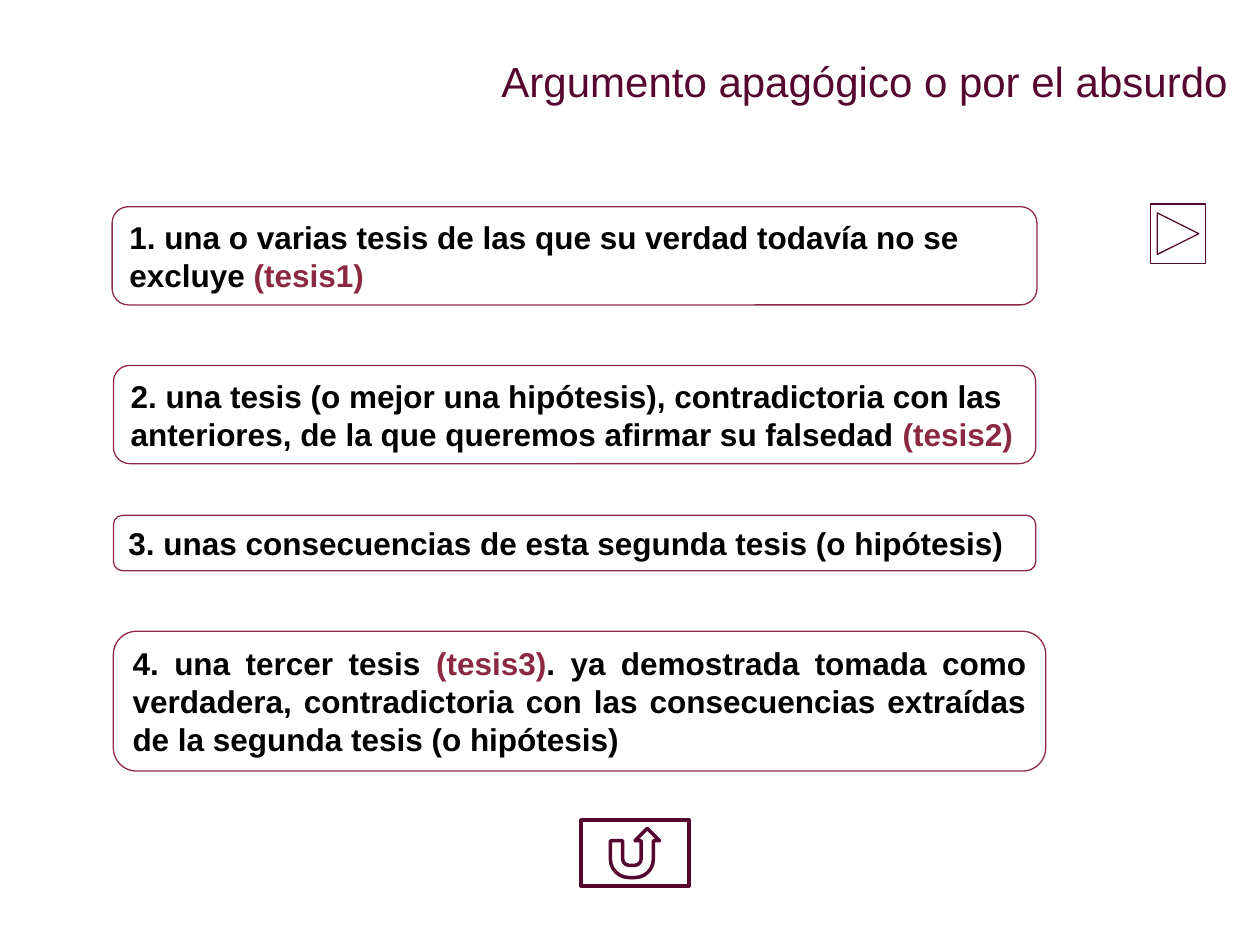
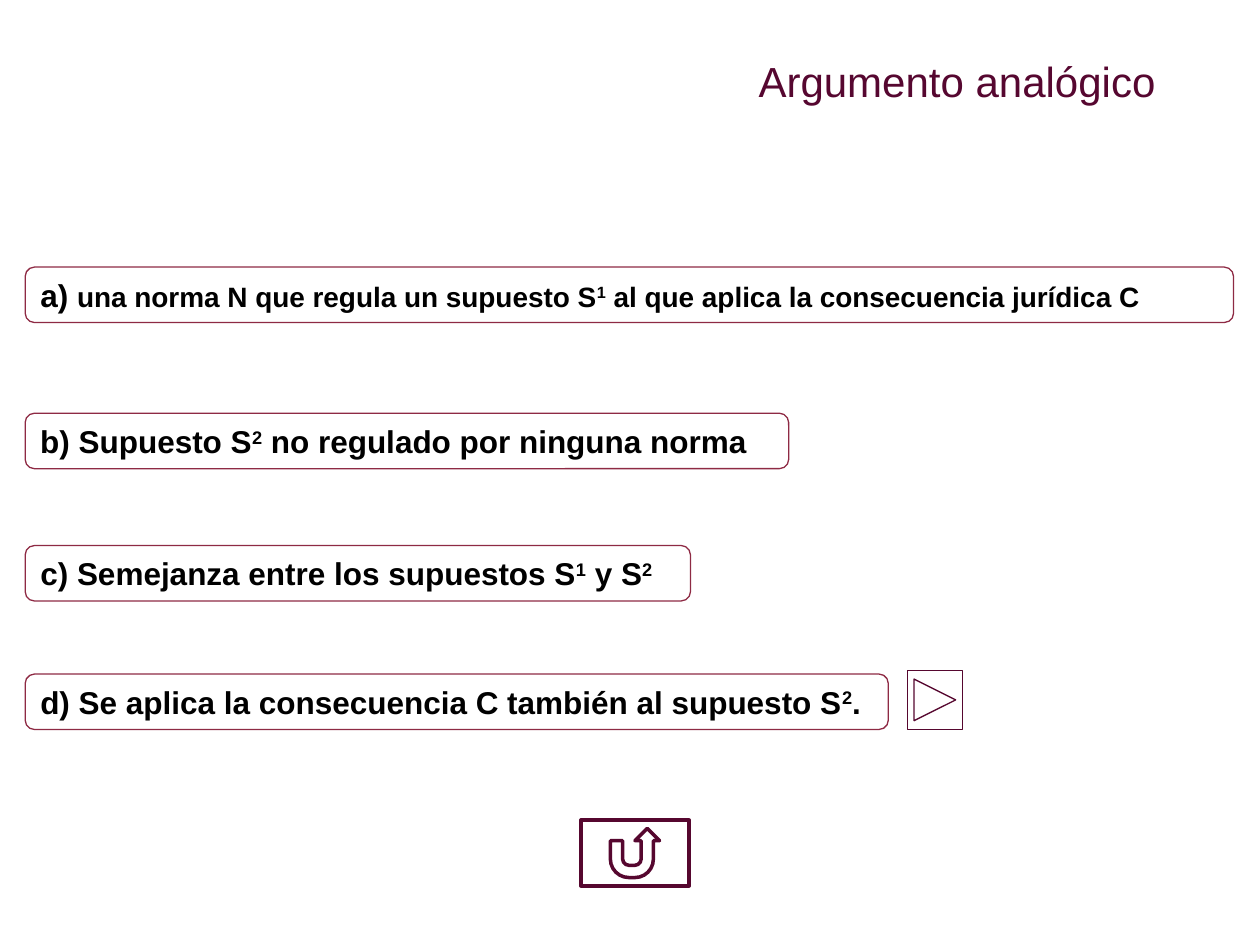
"""Build two slides on legal arguments: by absurdity and by analogy."""
from pptx import Presentation
from pptx.dml.color import RGBColor
from pptx.enum.shapes import MSO_SHAPE
from pptx.enum.text import MSO_ANCHOR, MSO_AUTO_SIZE, PP_ALIGN
from pptx.util import Pt

LEFT, JUSTIFY = PP_ALIGN.LEFT, PP_ALIGN.JUSTIFY
MIDDLE = MSO_ANCHOR.MIDDLE
ROUNDED = MSO_SHAPE.ROUNDED_RECTANGLE
FORWARD, RETURN = MSO_SHAPE.ACTION_BUTTON_FORWARD_OR_NEXT, MSO_SHAPE.ACTION_BUTTON_RETURN
NO_AUTOFIT = MSO_AUTO_SIZE.NONE
EMU_PER_PX = 9144
TITLE_ONLY = 5
FONT = "Arial"
COLORS = {"text": "000000", "thesis": "8B2943", "box": "8E2A44",
          "title": "560730", "button": "56072F"}
STYLES = {
    "normal": {"color": "text", "size": 18},
    "small": {"color": "text", "size": 16},
    "thesis": {"color": "thesis", "size": 18},
    "super": {"color": "text", "size": 18, "raised": True},
    "small super": {"color": "text", "size": 16, "raised": True},
    "title": {"color": "title", "size": 24, "bold": False},
}
SLIDES = [
    {
        "title": ("Argumento apagógico o por el absurdo", 398, 594),
        "forward": (913, 162),
        "boxes": [
            ((89, 164, 734, 78), LEFT, [
                ("1. una o varias tesis de las que su verdad todavía no se excluye ", "normal"),
                ("(tesis1)", "thesis")]),
            ((90, 290, 732, 78), LEFT, [
                ("2. una tesis (o mejor una hipótesis), contradictoria con las anteriores, "
                 "de la que queremos afirmar su falsedad ", "normal"),
                ("(tesis2)", "thesis")]),
            ((90, 409, 732, 44), LEFT, [
                ("3. unas consecuencias de esta segunda tesis (o hipótesis)", "normal")]),
            ((90, 501, 740, 111), JUSTIFY, [
                ("4. una tercer tesis ", "normal"), ("(tesis3)", "thesis"),
                (". ya demostrada tomada como verdadera, contradictoria con las "
                 "consecuencias extraídas de la segunda tesis (o hipótesis)", "normal")]),
        ],
    },
    {
        "title": ("Argumento analógico", 602, 354),
        "forward": (720, 532),
        "boxes": [
            ((20, 212, 959, 44), LEFT, [
                ("a) ", "normal"), ("una norma N que regula un supuesto S", "small"),
                ("1", "small super"),
                (" al que aplica la consecuencia jurídica C", "small")]),
            ((20, 328, 606, 44), LEFT, [
                ("b) Supuesto S", "normal"), ("2", "super"),
                (" no regulado por ninguna norma", "normal")]),
            ((20, 433, 528, 44), LEFT, [
                ("c) Semejanza entre los supuestos S", "normal"), ("1", "super"),
                (" y S", "normal"), ("2", "super")]),
            ((20, 535, 685, 44), LEFT, [
                ("d) Se aplica la consecuencia C también al supuesto S", "normal"),
                ("2", "super"), (".", "normal")]),
        ],
    },
]


def write_text(shape, runs, alignment):
    """Fill a shape with one paragraph of styled runs."""
    frame = shape.text_frame
    frame.word_wrap = True
    frame.auto_size = NO_AUTOFIT
    frame.vertical_anchor = MIDDLE
    paragraph = frame.paragraphs[0]
    paragraph.alignment = alignment
    for text, style_name in runs:
        style = STYLES[style_name]
        run = paragraph.add_run()
        run.text = text
        run.font.name = FONT
        run.font.size = Pt(style["size"])
        run.font.bold = style.get("bold", True)
        run.font.color.rgb = RGBColor.from_string(COLORS[style["color"]])
        if style.get("raised"):
            run._r.get_or_add_rPr().set("baseline", "30000")


def add_outline(slide, kind, box, color, width):
    """Add an unfilled preset shape with a coloured outline."""
    shape = slide.shapes.add_shape(kind, *[value * EMU_PER_PX for value in box])
    shape.shadow.inherit = False
    shape.fill.background()
    shape.line.color.rgb = RGBColor.from_string(COLORS[color])
    shape.line.width = Pt(width)
    return shape


presentation = Presentation()
presentation.slide_width = 1000 * EMU_PER_PX
presentation.slide_height = 750 * EMU_PER_PX

for content in SLIDES:
    slide = presentation.slides.add_slide(presentation.slide_layouts[TITLE_ONLY])

    heading, left, width = content["title"]
    title = slide.shapes.title
    title.left, title.top = left * EMU_PER_PX, 44 * EMU_PER_PX
    title.width, title.height = width * EMU_PER_PX, 40 * EMU_PER_PX
    frame = title.text_frame
    frame.margin_left = frame.margin_right = frame.margin_top = frame.margin_bottom = 0
    write_text(title, [(heading, "title")], LEFT)

    for box, alignment, runs in content["boxes"]:
        statement = add_outline(slide, ROUNDED, box, "box", 0.75)
        write_text(statement, runs, alignment)

    add_outline(slide, FORWARD, (*content["forward"], 44, 47), "button", 0.75)
    add_outline(slide, RETURN, (461, 651, 86, 52), "button", 2)

presentation.save("out.pptx")
